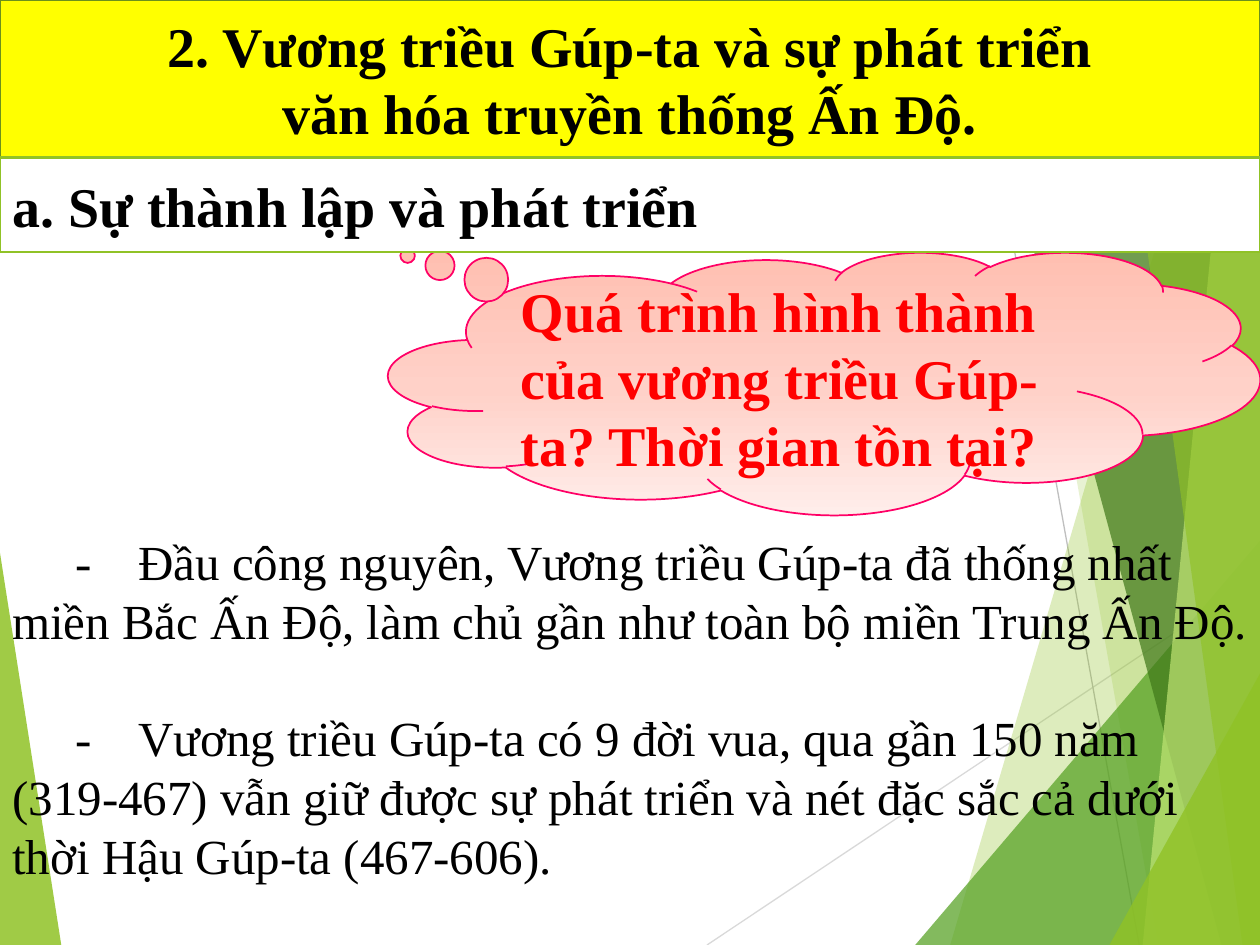
import copy
import pptx
import pptx.util
import pptx.dml.color
import pptx.enum.shapes
import pptx.enum.text
import pptx.oxml
import pptx.oxml.ns

Pt = pptx.util.Pt
Kind = pptx.enum.shapes.MSO_SHAPE
Align = pptx.enum.text.PP_ALIGN
Anchor = pptx.enum.text.MSO_ANCHOR
qn = pptx.oxml.ns.qn
WIDE, HIGH = 720, 540

COLORS = {
    "green": "90C226", "leaf": "54A021", "dark": "3F7819", "lime": "C0E474",
    "edge": "6B901C", "yellow": "FFFF00", "white": "FFFFFF", "black": "000000",
    "red": "FF0000", "pink": "FF0066", "pale": "D9D9D9", "gray": "BFBFBF",
    "rose": "FFBFB1", "blush": "FFD1C8", "mist": "FFEDEA",
}

# Background facets: points, colour, opacity in percent
FACETS = [
    ([(702, 0), (543, HIGH), (WIDE, HIGH), (WIDE, 0)], "green", 30),
    ([(567, 0), (662, HIGH), (WIDE, HIGH), (WIDE, 0)], "green", 20),
    ([(523, HIGH), (WIDE, 309), (WIDE, HIGH)], "leaf", 72),
    ([(552, 0), (698, HIGH), (WIDE, HIGH), (WIDE, 0)], "dark", 70),
    ([(706, 0), (653, HIGH), (WIDE, HIGH), (WIDE, 0)], "lime", 70),
    ([(636, 0), (710, HIGH), (WIDE, HIGH), (WIDE, 0)], "green", 65),
    ([(634, HIGH), (WIDE, 385), (WIDE, HIGH)], "green", 80),
]

NOTES = [
    (300, "\t- \tĐầu công nguyên, Vương triều Gúp-ta đã thống nhất miền Bắc Ấn Độ, "
          "làm chủ gần như toàn bộ miền Trung Ấn Độ."),
    (401, "\t- \tVương triều Gúp-ta có 9 đời vua, qua gần 150 năm (319-467) vẫn giữ "
          "được sự phát triển và nét đặc sắc cả dưới thời Hậu Gúp-ta (467-606)."),
]


class Deck:
    font = "Times New Roman"

    def __init__(self):
        self.prs = pptx.Presentation()
        self.prs.slide_width, self.prs.slide_height = Pt(WIDE), Pt(HIGH)
        self.slide = self.prs.slides.add_slide(self.prs.slide_layouts[5])
        self.shapes = self.slide.shapes

    def rgb(self, name):
        return pptx.dml.color.RGBColor.from_string(COLORS[name])

    def node(self, tag, **attrs):
        item = pptx.oxml.parse_xml(f'<a:{tag} {pptx.oxml.ns.nsdecls("a")}/>')
        for key, value in attrs.items():
            item.set(key, str(value))
        return item

    def paint(self, shape, fill, line, width):
        shape.fill.solid()
        shape.fill.fore_color.rgb = self.rgb(fill)
        shape.line.color.rgb = self.rgb(line)
        shape.line.width = Pt(width)

    def label(self, shape, text, size, color="black", bold=False,
              align=Align.LEFT, anchor=Anchor.MIDDLE):
        frame = shape.text_frame
        frame.text = text
        frame.word_wrap = True
        frame.auto_size = pptx.enum.text.MSO_AUTO_SIZE.NONE
        frame.vertical_anchor = anchor
        for para in frame.paragraphs:
            para.alignment = align
            for run in para.runs:
                run.font.name, run.font.size = self.font, Pt(size)
                run.font.bold = bold
                run.font.color.rgb = self.rgb(color)

    def facet(self, points, color, alpha):
        spots = [(Pt(x), Pt(y)) for x, y in points]
        form = self.shapes.build_freeform(*spots[0])
        form.add_line_segments(spots[1:], close=True)
        shape = form.convert_to_shape()
        shape.shadow.inherit = False
        shape.fill.solid()
        shape.fill.fore_color.rgb = self.rgb(color)
        shape.line.fill.background()
        tint = shape.element.spPr.find(f"{qn('a:solidFill')}/{qn('a:srgbClr')}")
        tint.append(self.node("alpha", val=alpha * 1000))

    def line(self, start, end, color):
        kind = pptx.enum.shapes.MSO_CONNECTOR.STRAIGHT
        link = self.shapes.add_connector(kind, *map(Pt, start + end))
        link.line.color.rgb = self.rgb(color)
        link.line.width = Pt(0.75)
        link.element.spPr.append(self.node("effectLst"))

    def title(self, text, box):
        shape = self.shapes.title
        self.shapes.element.append(shape.element)  # in front of the facets
        shape.left, shape.top, shape.width, shape.height = map(Pt, box)
        self.paint(shape, "yellow", "edge", 1.5)
        self.label(shape, text, 32, bold=True, align=Align.CENTER)

    def bar(self, text, box):
        shape = self.shapes.add_shape(Kind.RECTANGLE, *map(Pt, box))
        shape.shadow.inherit = False
        self.paint(shape, "white", "green", 1.5)
        self.label(shape, text, 32, bold=True)

    def cloud(self, text, box):
        shape = self.shapes.add_shape(Kind.CLOUD_CALLOUT, *map(Pt, box))
        shape.shadow.inherit = False
        shape.adjustments[0], shape.adjustments[1] = -0.478, -0.486
        self.paint(shape, "rose", "pink", 1)
        shape.fill.gradient()
        shape.fill.gradient_angle = 270
        first = shape.element.spPr.find(f".//{qn('a:gs')}")
        first.addnext(copy.deepcopy(first))
        stops = zip(shape.fill.gradient_stops, (0, 0.52, 1), ("rose", "blush", "mist"))
        for stop, place, color in stops:
            stop.position = place
            stop.color.rgb = self.rgb(color)
        self.label(shape, text, 32, "red", bold=True)

    def note(self, text, box):
        shape = self.shapes.add_textbox(*map(Pt, box))
        self.label(shape, text, 28, anchor=Anchor.TOP)
        tabs = self.node("tabLst")
        for place in (36, 72):
            tabs.append(self.node("tab", pos=int(Pt(place)), algn="l"))
        shape.element.find(f".//{qn('a:pPr')}").append(tabs)

    def save(self):
        self.prs.save("out.pptx")


def main():
    deck = Deck()

    # Background
    deck.facet([(0, 316), (35, HIGH), (0, HIGH)], "green", 85)
    deck.line((404, HIGH), (WIDE, 329), "pale")
    deck.line((554, 0), (651, HIGH), "gray")
    for points, color, alpha in FACETS:
        deck.facet(points, color, alpha)

    # Headings and question
    deck.title("2. Vương triều Gúp-ta và sự phát triển\vvăn hóa truyền thống Ấn Độ.",
               (0, 0, WIDE, 90))
    deck.cloud("Quá trình hình thành của vương triều Gúp-ta? Thời gian tồn tại?",
               (222, 144, 498, 150))
    deck.bar("a. Sự thành lập và phát triển", (0, 90, WIDE, 54))

    # Answers
    for top, text in NOTES:
        deck.note(text, (0, top, WIDE, 109))

    deck.save()


if __name__ == "__main__":
    main()
